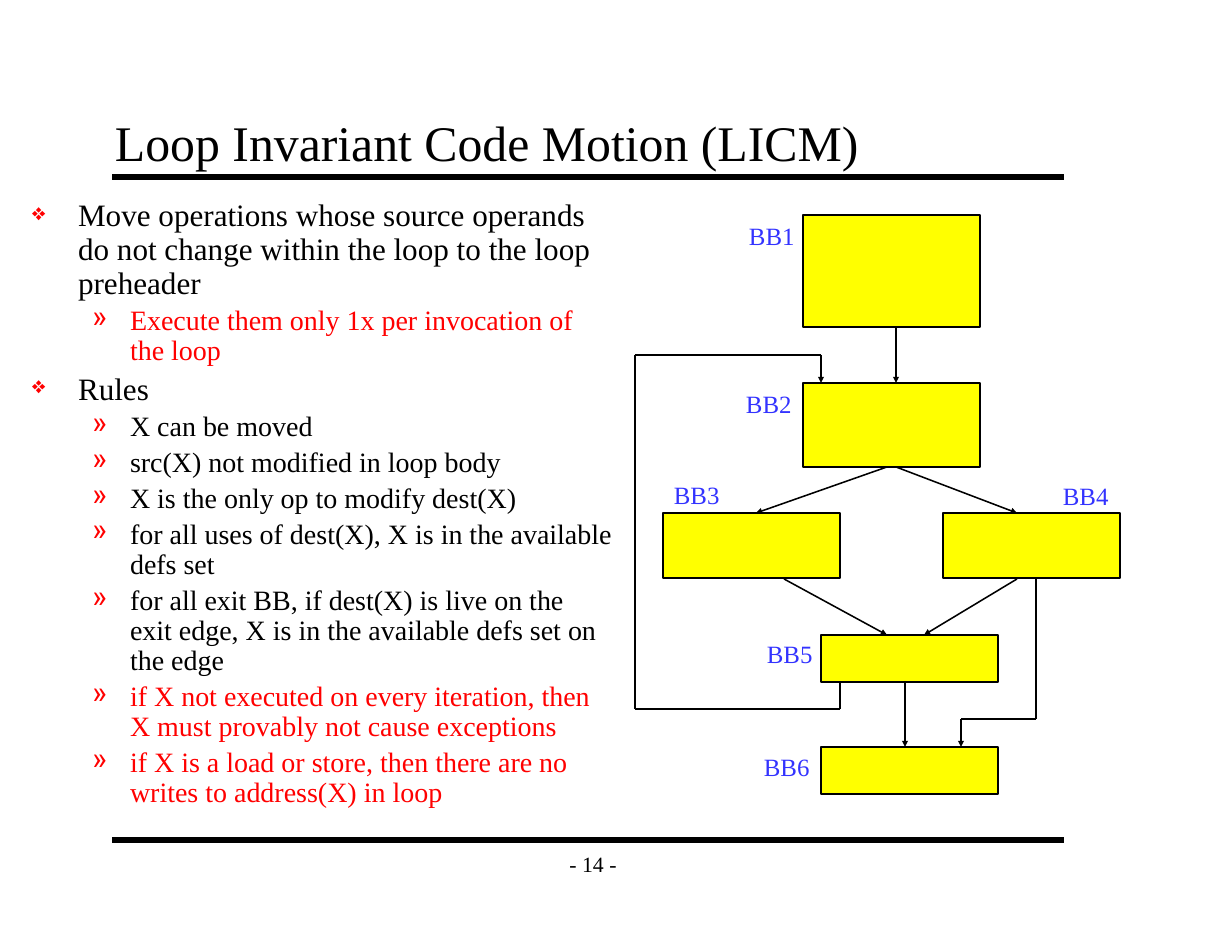
from itertools import pairwise

from lxml import etree
from pptx import Presentation
from pptx.dml.color import RGBColor
from pptx.enum.shapes import MSO_CONNECTOR, MSO_SHAPE
from pptx.enum.text import MSO_ANCHOR, MSO_AUTO_SIZE, PP_ALIGN
from pptx.oxml.ns import qn
from pptx.util import Pt

PX = 914400 / 112
FONT = "Times New Roman"
BLACK, RED, BLUE, YELLOW = "000000", "FF0000", "3333FF", "FFFF00"
STRAIGHT, RECTANGLE = MSO_CONNECTOR.STRAIGHT, MSO_SHAPE.RECTANGLE
TOP, MIDDLE, BOTTOM = MSO_ANCHOR.TOP, MSO_ANCHOR.MIDDLE, MSO_ANCHOR.BOTTOM
LEFT, CENTER = PP_ALIGN.LEFT, PP_ALIGN.CENTER
FIT_SHAPE = MSO_AUTO_SIZE.SHAPE_TO_FIT_TEXT

deck = Presentation()
deck.slide_width, deck.slide_height = round(1232 * PX), round(952 * PX)
page = deck.slides.add_slide(deck.slide_layouts[6])


def add_text(area, lines, anchor=TOP, align=LEFT, wrap=True):
    """Add a text box; each line is (text, size, colour)."""
    box = page.shapes.add_textbox(*[round(v * PX) for v in area])
    frame = box.text_frame
    frame.word_wrap = wrap
    frame.vertical_anchor = anchor
    frame.margin_left = frame.margin_right = round(12 * PX)
    frame.margin_top = frame.margin_bottom = round(6 * PX)
    frame.text = "\n".join(text for text, size, color in lines)
    for para, (text, size, color) in zip(frame.paragraphs, lines):
        para.alignment = align
        font = para.runs[0].font
        font.name, font.size = FONT, Pt(size)
        font.color.rgb = RGBColor.from_string(color)
    return frame


def add_line(start, end, width=1, arrow=False):
    line = page.shapes.add_connector(
        STRAIGHT, *[round(v * PX) for v in (*start, *end)])
    line.line.color.rgb = RGBColor.from_string(BLACK)
    line.line.width = Pt(width)
    if arrow:
        etree.SubElement(line.line._get_or_add_ln(), qn("a:tailEnd"),
                         type="triangle", w="sm", len="sm")
    etree.SubElement(line._element.spPr, qn("a:effectLst"))


# Rules, page number and title
for y in (177, 840):
    add_line((112, y), (1064, y), width=4)
add_text((551, 840, 84, 47), [("- 14 -", 14, BLACK)], MIDDLE, CENTER, wrap=False)
add_text((103, 102, 952, 75), [("Loop Invariant Code Motion (LICM)", 32, BLACK)], BOTTOM)

# Bulleted text: (level, right margin, text, colour)
bullets = [
    (0, 0, "Move operations whose source operands do not change within the loop "
           "to the loop preheader", BLACK),
    (1, 0, "Execute them only 1x per invocation of the loop", RED),
    (0, 0, "Rules", BLACK),
    (1, 0, "X can be moved", BLACK),
    (1, 0, "src(X) not modified in loop body", BLACK),
    (1, 0, "X is the only op to modify dest(X)", BLACK),
    (1, 0, "for all uses of dest(X), X is in the available defs set", BLACK),
    (1, 8, "for all exit BB, if dest(X) is live on the exit edge, "
           "X is in the available defs set on the edge", BLACK),
    (1, 0, "if X not executed on every iteration, then "
           "X must provably not cause exceptions", RED),
    (1, 0, "if X is a load or store, then there are no writes to address(X) in loop", RED),
]
# Per level: text size, left margin, hanging indent, bullet size in %, bullet
levels = [(20, 46, 46, 75, "❖"), (18, 98, 38, 100, "»")]
body = add_text((20, 194, 606, 638),
                [(text, levels[level][0], color) for level, right, text, color in bullets])
for para, (level, right, text, color) in zip(body.paragraphs, bullets):
    size, margin, hanging, percent, symbol = levels[level]
    para.level = level
    para.line_spacing = 0.9
    para.space_before = Pt(size / 5)
    props = para._p.get_or_add_pPr()
    props.set("marL", str(round(margin * PX)))
    props.set("marR", str(round(right * PX)))
    props.set("indent", str(round(-hanging * PX)))
    bullet_color = etree.SubElement(props, qn("a:buClr"))
    etree.SubElement(bullet_color, qn("a:srgbClr"), val=RED)
    etree.SubElement(props, qn("a:buSzPct"), val=str(percent * 1000))
    etree.SubElement(props, qn("a:buChar"), char=symbol)

# Basic blocks: name, left, top, height, label left, label top
blocks = [
    ("BB1", 803, 215, 112, 737, 215),
    ("BB2", 803, 383, 84, 734, 383),
    ("BB3", 663, 513, 65, 662, 474),
    ("BB4", 943, 513, 65, 1051, 475),
    ("BB5", 821, 635, 47, 755, 633),
    ("BB6", 821, 747, 47, 752, 746),
]
for name, left, top, height, label_left, label_top in blocks:
    block = page.shapes.add_shape(
        RECTANGLE, *[round(v * PX) for v in (left, top, 177, height)])
    block.shadow.inherit = False
    block.fill.solid()
    block.fill.fore_color.rgb = RGBColor.from_string(YELLOW)
    block.line.color.rgb = RGBColor.from_string(BLACK)
    block.line.width = Pt(1)
    label = add_text((label_left, label_top, 72, 41), [(name, 16, BLUE)], wrap=False)
    label.auto_size = FIT_SHAPE

# Control flow: each route ends in an arrowhead
routes = [
    [(896, 327), (896, 383)],
    [(887, 467), (756, 513)],
    [(896, 467), (1017, 513)],
    [(784, 579), (887, 635)],
    [(1017, 579), (924, 635)],
    [(905, 681), (905, 747)],
    [(840, 681), (840, 709), (635, 709), (635, 355), (821, 355), (821, 383)],
    [(1036, 579), (1036, 719), (961, 719), (961, 747)],
]
for route in routes:
    for start, end in pairwise(route):
        add_line(start, end, arrow=end == route[-1])

deck.save("out.pptx")
